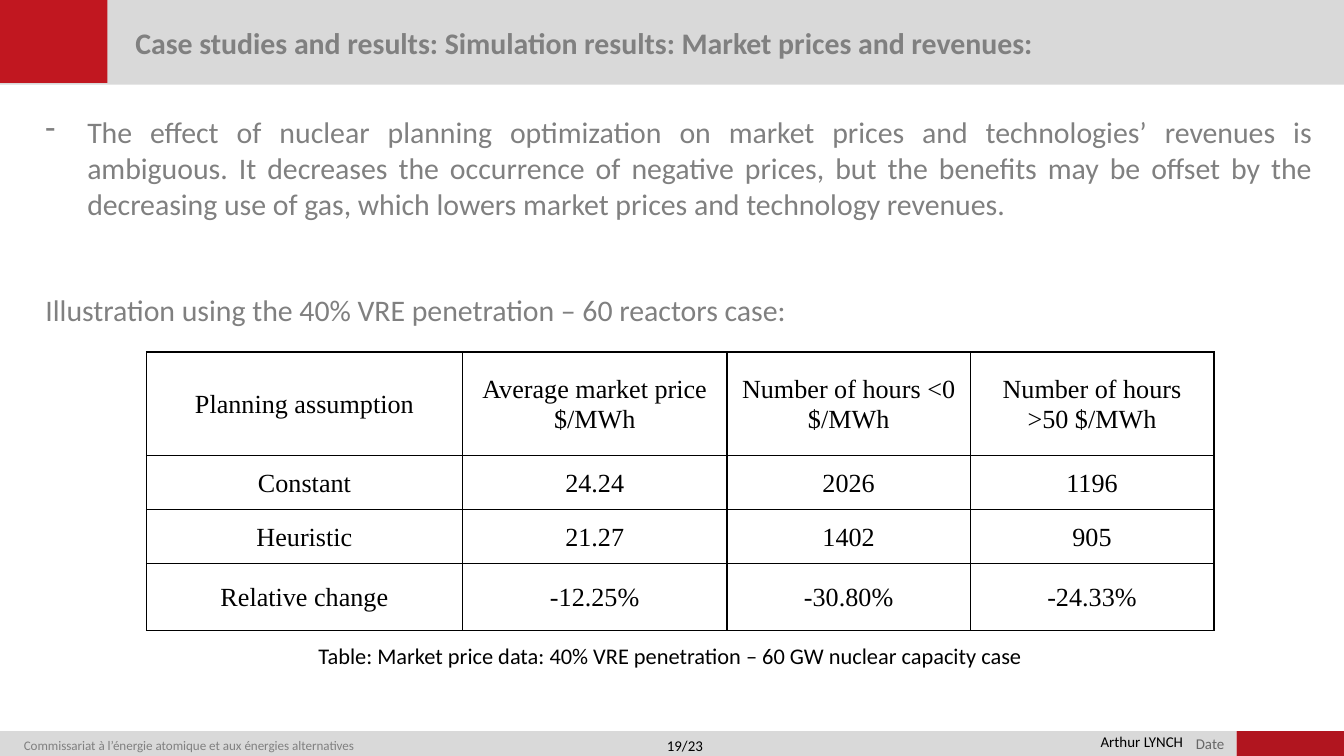
from lxml import etree
from pptx import Presentation
from pptx.dml.color import RGBColor
from pptx.enum.shapes import MSO_SHAPE
from pptx.enum.text import MSO_ANCHOR, PP_ALIGN
from pptx.oxml.ns import qn
from pptx.util import Cm, Pt

RECT = MSO_SHAPE.RECTANGLE
TOP, MIDDLE = MSO_ANCHOR.TOP, MSO_ANCHOR.MIDDLE
LEFT, CENTER = PP_ALIGN.LEFT, PP_ALIGN.CENTER
RIGHT, JUSTIFY = PP_ALIGN.RIGHT, PP_ALIGN.JUSTIFY

BLACK = RGBColor(0x00, 0x00, 0x00)
GREY = RGBColor(0x80, 0x80, 0x80)
DARK_GREY = RGBColor(0x66, 0x66, 0x66)
LIGHT_GREY = RGBColor(0xD9, 0xD9, 0xD9)
RED = RGBColor(0xC1, 0x17, 0x20)
DARK_RED = RGBColor(0xB1, 0x15, 0x1F)

WIDTH, HEIGHT = 25.4, 14.29
FOOTER_TOP = 13.82
RED_WIDTH = 2.03

HEADING = {"size": Pt(16), "color": GREY, "bold": True}
BODY = {"size": Pt(16), "color": GREY}
CAPTION = {"size": Pt(12), "color": BLACK}
FOOTER = {"size": Pt(8), "color": BLACK}
DATE = {"size": Pt(8), "color": DARK_GREY}
INSTITUTION = {"size": Pt(7), "color": GREY}
CELL = {"size": Pt(14), "color": BLACK, "name": "Times New Roman"}

COLUMNS = [5.97, 5, 4.6, 4.6]
ROWS = [1.96, 1.02, 1.02, 1.27]
PRICES = [
    ["Planning assumption", "Average market price $/MWh",
     "Number of hours <0 $/MWh", "Number of hours >50 $/MWh"],
    ["Constant", "24.24", "2026", "1196"],
    ["Heuristic", "21.27", "1402", "905"],
    ["Relative change", "-12.25%", "-30.80%", "-24.33%"],
]


class SlideBuilder:
    def __init__(self, slide, font="Calibri"):
        self.s = slide
        self.font = font

    def add_run(self, p, text, style):
        r = p.add_run()
        r.text = text
        for key, value in {"name": self.font, **style}.items():
            if key == "color":
                r.font.color.rgb = value
            else:
                setattr(r.font, key, value)

    def bar(self, box, color):
        sp = self.s.shapes.add_shape(RECT, *map(Cm, box))
        sp.shadow.inherit = False
        sp.fill.solid()
        sp.fill.fore_color.rgb = color
        sp.line.fill.background()

    def text(self, box, text, style, align=LEFT, anchor=TOP, spacing=None, dash=False):
        tf = self.s.shapes.add_textbox(*map(Cm, box)).text_frame
        tf.word_wrap = True
        tf.vertical_anchor = anchor
        p = tf.paragraphs[0]
        p.alignment = align
        p.line_spacing = spacing
        if dash:
            self.dash(p)
        self.add_run(p, text, style)

    def dash(self, p, indent=Cm(0.79)):
        """Give the paragraph a hanging dash as its bullet."""
        pPr = p._p.get_or_add_pPr()
        pPr.set("marL", str(indent))
        pPr.set("indent", str(-indent))
        etree.SubElement(pPr, qn("a:buChar"), char="-")

    def borders(self, cell):
        tcPr = cell._tc.get_or_add_tcPr()
        for i, side in enumerate("LRTB"):
            ln = etree.Element(qn(f"a:ln{side}"), w=str(Pt(1)))
            fill = etree.SubElement(ln, qn("a:solidFill"))
            etree.SubElement(fill, qn("a:srgbClr"), val=str(BLACK))
            tcPr.insert(i, ln)

    def table(self, left, top, widths, heights, values):
        box = (left, top, sum(widths), sum(heights))
        table = self.s.shapes.add_table(len(heights), len(widths), *map(Cm, box)).table
        table.first_row = table.horz_banding = False
        for column, width in zip(table.columns, widths):
            column.width = Cm(width)
        for row, height, texts in zip(table.rows, heights, values):
            row.height = Cm(height)
            for cell, text in zip(row.cells, texts):
                cell.fill.background()
                cell.vertical_anchor = MIDDLE
                cell.margin_left = cell.margin_right = Cm(0.18)
                cell.margin_top = cell.margin_bottom = 0
                self.borders(cell)
                p = cell.text_frame.paragraphs[0]
                p.alignment = CENTER
                p.line_spacing = 1.07
                self.add_run(p, text, CELL)


def main():
    prs = Presentation()
    prs.slide_width, prs.slide_height = Cm(WIDTH), Cm(HEIGHT)
    b = SlideBuilder(prs.slides.add_slide(prs.slide_layouts[6]))

    footer_height = HEIGHT - FOOTER_TOP
    red_left = WIDTH - RED_WIDTH
    b.bar((0, FOOTER_TOP, red_left, footer_height), LIGHT_GREY)
    b.bar((0, 0, WIDTH, 1.6), LIGHT_GREY)
    b.bar((red_left, FOOTER_TOP, RED_WIDTH, footer_height), DARK_RED)
    b.bar((0, 0, RED_WIDTH, 1.57), RED)

    b.text((20.09, 13.8, 3.3, 0.56), "Date", DATE, RIGHT, spacing=0.9)
    b.text((0.2, 13.69, 7.14, 0.66),
           "Commissariat à l’énergie atomique et aux énergies alternatives",
           INSTITUTION, spacing=1.4)
    b.text((2.31, 0.36, 19.41, 0.89),
           "Case studies and results: Simulation results: Market prices and revenues:",
           HEADING, anchor=MIDDLE)
    b.text((20.55, 13.72, 2.57, 0.61), "Arthur LYNCH", FOOTER)
    b.text((11.66, 13.79, 2.57, 0.61), "19/23", FOOTER, CENTER)

    b.text((0.61, 2.03, 24.46, 2.31),
           "The effect of nuclear planning optimization on market prices and "
           "technologies’ revenues is ambiguous. It decreases the occurrence of "
           "negative prices, but the benefits may be offset by the decreasing use "
           "of gas, which lowers market prices and technology revenues.",
           BODY, JUSTIFY, dash=True)
    b.text((0.61, 5.38, 24.46, 0.94),
           "Illustration using the 40% VRE penetration – 60 reactors case:", BODY, JUSTIFY)
    b.table(2.77, 6.65, COLUMNS, ROWS, PRICES)
    b.text((5.77, 12.01, 16.87, 0.76),
           "Table: Market price data: 40% VRE penetration – 60 GW nuclear capacity case",
           CAPTION)

    prs.save("out.pptx")


if __name__ == "__main__":
    main()
